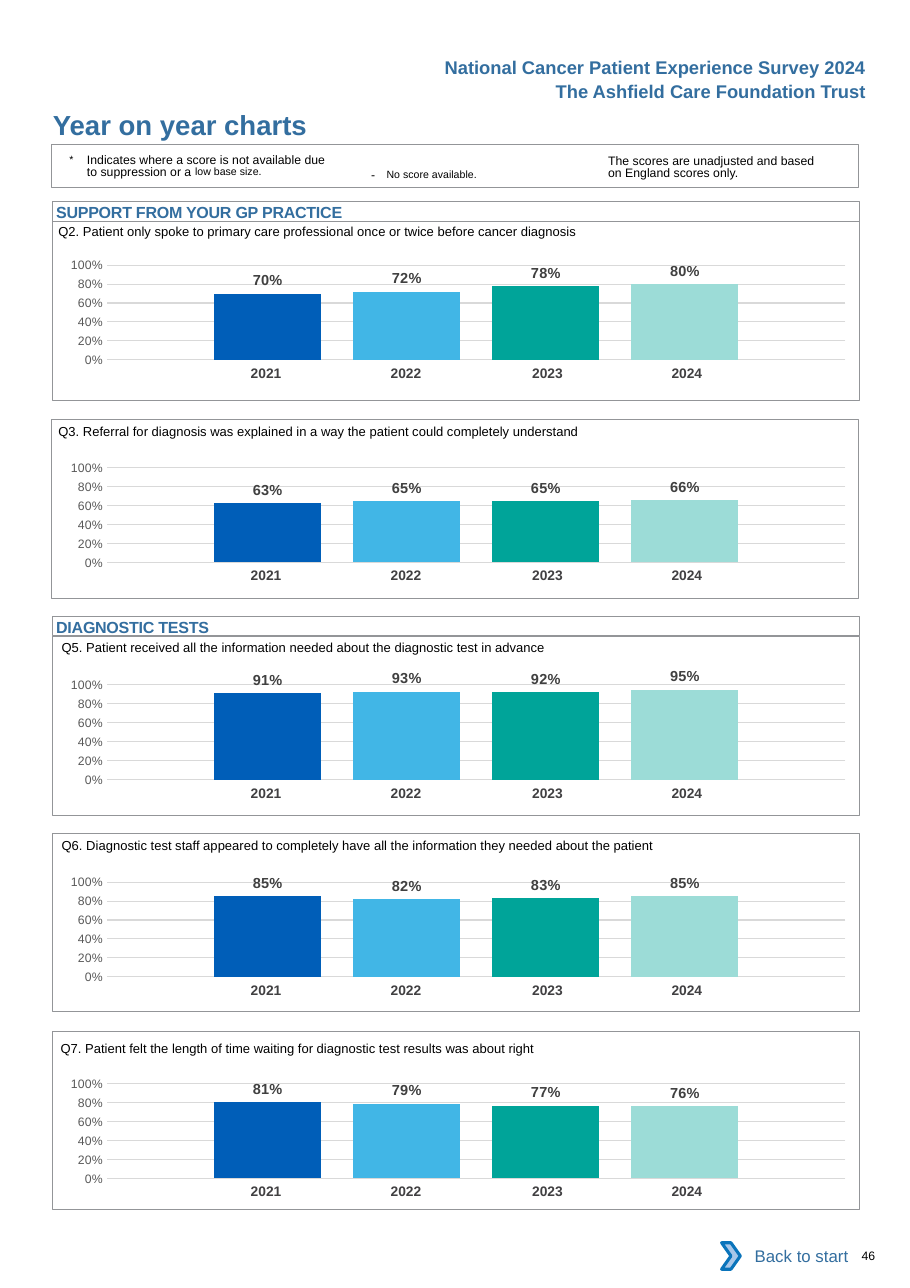
"""Build the year on year charts page of the patient survey report."""
from dataclasses import dataclass

from lxml.etree import SubElement
from pptx import Presentation
from pptx.chart.data import CategoryChartData
from pptx.dml.color import RGBColor
from pptx.enum.chart import XL_CHART_TYPE as ChartType, XL_LABEL_POSITION as LabelPosition
from pptx.enum.chart import XL_TICK_MARK as TickMark
from pptx.enum.shapes import MSO_SHAPE as Preset
from pptx.enum.text import MSO_ANCHOR as Anchor, PP_ALIGN as Align
from pptx.oxml.ns import qn
from pptx.util import Inches, Pt


@dataclass(frozen=True)
class Theme:
    font: str = "Arial"
    chart_font: str = "Calibri"
    ink: str = "000000"
    heading: str = "336E9F"
    border: str = "939598"
    year: str = "414042"
    axis: str = "595959"
    label: str = "404040"
    grid: str = "D9D9D9"
    paper: str = "FFFFFF"
    arrow_fill: str = "A8C7E9"
    arrow_line: str = "0A74BB"
    bars: tuple = ("005EB8", "41B6E6", "00A499", "9CDCD7")
    title_size: float = 18
    header_size: float = 12
    section_size: float = 10.5
    link_size: float = 11
    question_size: float = 8.5
    small_size: float = 8
    raised_size: float = 12
    year_size: float = 9
    label_size: float = 9.5
    chart_size: float = 10


THEME = Theme()
PAGE_SIZE = (8.26, 11.69)
HEADERS = [("National Cancer Patient Experience Survey 2024", 0.46),
           ("The Ashfield Care Foundation Trust", 0.68)]
TITLE = "Year on year charts"
SECTIONS = [("SUPPORT FROM YOUR GP PRACTICE", 1.83), ("DIAGNOSTIC TESTS", 5.59)]
YEARS = ["2021", "2022", "2023", "2024"]
YEAR_COLUMNS = [(1.27, 0), (1.27, 0), (1.34, 0.04), (1.27, 0.12)]
PANELS = [
    dict(question="Q2. Patient only spoke to primary care professional once or twice before cancer diagnosis",
         left=0.48, top=2.01, text=(0.53, 1.94), chart_top=2.22, scores=(0.70, 0.72, 0.78, 0.80)),
    dict(question="Q3. Referral for diagnosis was explained in a way the patient could completely understand",
         left=0.47, top=3.81, text=(0.53, 3.75), chart_top=4.06, scores=(0.63, 0.65, 0.65, 0.66)),
    dict(question="Q5. Patient received all the information needed about the diagnostic test in advance",
         left=0.48, top=5.78, text=(0.56, 5.71), chart_top=6.03, scores=(0.91, 0.93, 0.92, 0.95)),
    dict(question="Q6. Diagnostic test staff appeared to completely have all the information "
                  "they needed about the patient",
         left=0.48, top=7.56, text=(0.56, 7.51), chart_top=7.82, scores=(0.85, 0.82, 0.83, 0.85)),
    dict(question="Q7. Patient felt the length of time waiting for diagnostic test results was about right",
         left=0.48, top=9.36, text=(0.55, 9.35), chart_top=9.65, scores=(0.81, 0.79, 0.77, 0.76)),
]
NOTES = [
    dict(at=(0.63, 1.38, 2.4, 0.27), inset=(0, 0.03, 0, 0), spacing=8.1, hang=0.16,
         spans=[("*\t", 3), ("Indicates where a score is not available due to suppression or a ", 0),
                ("low base size.", 7)]),
    dict(at=(3.27, 1.41, 1.83, 0.24), inset=(0.1, 0.05, 0.1, 0.05), hang=0.14,
         spans=[("-\t", 0), ("No score available.", 3)]),
    dict(at=(5.52, 1.38, 1.95, 0.27), inset=(0, 0.03, 0, 0), spacing=8.1,
         spans=[("The scores are unadjusted and based on England scores only.", 0)]),
]
PANEL_WIDTH, PANEL_HEIGHT = 7.32, 1.62
PLOT_LAYOUT = {"layoutTarget": "inner", "xMode": "edge", "yMode": "edge",
               "x": 0.08, "y": 0.145, "w": 0.915, "h": 0.666}


def assign(target, **values):
    for name, value in values.items():
        setattr(target, name, value)


def style(font, size, color, bold=False, name=THEME.font):
    assign(font, size=Pt(size), bold=bold, name=name)
    font.color.rgb = RGBColor.from_string(color)


def write(frame, spans, size, color=THEME.ink, bold=False, align=Align.LEFT,
          inset=(0, 0, 0, 0), anchor=Anchor.TOP, spacing=None, hang=0, tracking=0):
    left, top, right, bottom = map(Inches, inset)
    assign(frame, word_wrap=True, vertical_anchor=anchor, margin_left=left,
           margin_top=top, margin_right=right, margin_bottom=bottom)
    para = frame.paragraphs[0]
    assign(para, alignment=align, line_spacing=Pt(spacing) if spacing else None)
    if hang:
        para._p.get_or_add_pPr().set("marL", str(Inches(hang)))
        para._p.get_or_add_pPr().set("indent", str(-Inches(hang)))
    for text, raised in [(spans, 0)] if isinstance(spans, str) else spans:
        span = para.add_run()
        span.text = text
        style(span.font, THEME.raised_size if raised else size, color, bold)
        if raised:
            span.font._element.set("baseline", str(raised * 1000))
        if tracking:
            span.font._element.set("spc", str(tracking))


def add_text(page, at, spans, size, **options):
    write(page.shapes.add_textbox(*map(Inches, at)).text_frame, spans, size, **options)


def add_box(page, at, preset=Preset.RECTANGLE, fill=None, line=None, width=0.5):
    box = page.shapes.add_shape(preset, *map(Inches, at))
    box.shadow.inherit = False
    if fill:
        box.fill.solid()
        box.fill.fore_color.rgb = RGBColor.from_string(fill)
    else:
        box.fill.background()
    if line:
        box.line.color.rgb = RGBColor.from_string(line)
        box.line.width = Pt(width)
    else:
        box.line.fill.background()
    return box


def add_years(page, top):
    widths = [width for width, _ in YEAR_COLUMNS]
    table = page.shapes.add_table(1, len(YEARS), *map(Inches, (1.73, top, sum(widths), 0.27))).table
    assign(table, first_row=False, horz_banding=False)
    for index, (year, (width, right)) in enumerate(zip(YEARS, YEAR_COLUMNS)):
        table.columns[index].width = Inches(width)
        cell = table.cell(0, index)
        cell.fill.background()
        assign(cell, margin_left=Inches(0.1), margin_right=Inches(right),
               margin_top=Inches(0.05), margin_bottom=Inches(0.05))
        para = cell.text_frame.paragraphs[0]
        para.alignment = Align.CENTER
        span = para.add_run()
        span.text = year
        style(span.font, THEME.year_size, THEME.year, True)


def add_scores(page, top, scores):
    data = CategoryChartData(number_format="0%")
    data.categories = ["1"]
    for number, score in enumerate(scores, 1):
        data.add_series(f"Series {number}", [score])
    chart = page.shapes.add_chart(ChartType.COLUMN_CLUSTERED,
                                  *map(Inches, (0.39, top, PANEL_WIDTH, 1.29)), data).chart
    assign(chart, has_legend=False, has_title=False)
    style(chart.font, THEME.chart_size, THEME.ink, name=THEME.chart_font)
    chart.category_axis.visible = False
    axis = chart.value_axis
    assign(axis, minimum_scale=0, maximum_scale=1, major_unit=0.2, has_major_gridlines=True,
           major_tick_mark=TickMark.NONE, minor_tick_mark=TickMark.NONE)
    assign(axis.tick_labels, number_format="0%", number_format_is_linked=False)
    style(axis.tick_labels.font, THEME.small_size, THEME.axis)
    axis.format.line.fill.background()
    axis.major_gridlines.format.line.color.rgb = RGBColor.from_string(THEME.grid)
    axis.major_gridlines.format.line.width = Pt(0.75)
    plot = chart.plots[0]
    assign(plot, gap_width=200, overlap=-30, vary_by_categories=False)
    for series, color in zip(plot.series, THEME.bars):
        series.format.fill.solid()
        series.format.fill.fore_color.rgb = RGBColor.from_string(color)
        assign(series.data_labels, show_value=True, position=LabelPosition.OUTSIDE_END,
               number_format="0%", number_format_is_linked=False)
        style(series.data_labels.font, THEME.label_size, THEME.label, True)
    area = chart._chartSpace.find(".//" + qn("c:plotArea"))
    for old in area.findall(qn("c:layout")):
        area.remove(old)
    layout = SubElement(area, qn("c:layout"))
    area.insert(0, layout)
    manual = SubElement(layout, qn("c:manualLayout"))
    for name, value in PLOT_LAYOUT.items():
        SubElement(manual, qn("c:" + name)).set("val", str(value))


def main():
    deck = Presentation()
    deck.slide_width, deck.slide_height = map(Inches, PAGE_SIZE)
    page = deck.slides.add_slide(deck.slide_layouts[6])
    for text, top in HEADERS:
        add_text(page, (3.46, top, 4.5, 0.3), text, THEME.header_size, color=THEME.heading,
                 bold=True, align=Align.RIGHT, inset=(0.1, 0.05, 0.1, 0.05))
    add_text(page, (0.48, 0.98, 4.5, 0.3), TITLE, THEME.title_size, color=THEME.heading, bold=True)
    add_box(page, (0.47, 1.31, PANEL_WIDTH, 0.39), line=THEME.border, width=0.75)
    for note in NOTES:
        add_text(page, size=THEME.small_size, **note)
    for text, top in SECTIONS:
        box = add_box(page, (0.48, top, PANEL_WIDTH, 0.18), line=THEME.border)
        write(box.text_frame, text, THEME.section_size, color=THEME.heading, bold=True,
              inset=(0.03, 0.01, 0, 0), tracking=-15)
    for panel in PANELS:
        add_text(page, (*panel["text"], 7.2, 0.24), panel["question"], THEME.question_size,
                 inset=(0, 0.09, 0, 0))
        add_years(page, panel["chart_top"] + 1.05)
        add_scores(page, panel["chart_top"], panel["scores"])
        add_box(page, (panel["left"], panel["top"], PANEL_WIDTH, PANEL_HEIGHT), line=THEME.border)
    back = add_box(page, (6.62, 11.19, 1.18, 0.42), fill=THEME.paper)
    write(back.text_frame, "Back to start", THEME.link_size, color=THEME.heading, align=Align.RIGHT,
          inset=(0.1, 0.05, 0.1, 0.05), anchor=Anchor.MIDDLE)
    add_box(page, (6.55, 11.28, 0.17, 0.24), Preset.CHEVRON, THEME.arrow_fill, THEME.arrow_line, 2)
    add_text(page, (7.82, 11.33, 0.4, 0.13), "46", THEME.small_size)
    deck.save("out.pptx")


if __name__ == "__main__":
    main()
